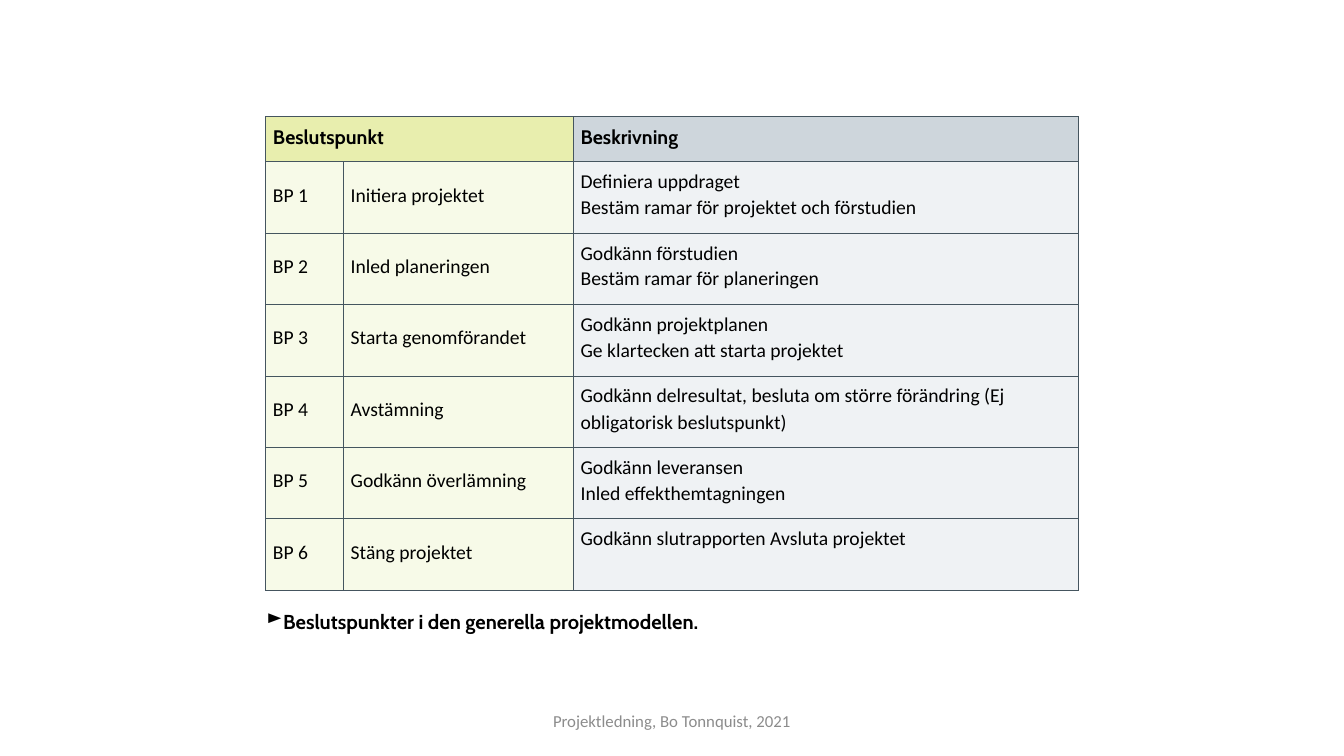
from lxml.etree import SubElement
from pptx import Presentation
from pptx.dml.color import RGBColor
from pptx.enum.text import MSO_ANCHOR, PP_ALIGN
from pptx.oxml import parse_xml
from pptx.oxml.ns import nsdecls, qn
from pptx.util import Emu, Pt

PX = 9525
THEME = {
    "head_font": "Cabin", "body_font": "Calibri",
    "text": "000000", "footer": "8C8C8C", "border": "45555F",
    "head_fills": ["E8EEAE", "E8EEAE", "CED6DC"],
    "body_fills": ["F7FAE8", "F7FAE8", "EFF2F4"],
    "table_size": 14, "caption_size": 14.4, "footer_size": 12,
}
COLS = [74, 219, 481]
HEAD_H, ROW_H = 43, 68
DECISIONS = [
    ("Initiera projektet", ["Definiera uppdraget", "Bestäm ramar för projektet och förstudien"]),
    ("Inled planeringen", ["Godkänn förstudien", "Bestäm ramar för planeringen"]),
    ("Starta genomförandet", ["Godkänn projektplanen", "Ge klartecken att starta projektet"]),
    ("Avstämning", ["Godkänn delresultat, besluta om större förändring (Ej obligatorisk beslutspunkt)"]),
    ("Godkänn överlämning", ["Godkänn leveransen", "Inled effekthemtagningen"]),
    ("Stäng projektet", ["Godkänn slutrapporten Avsluta projektet"]),
]


def px(n):
    return Emu(n * PX)


def write(tf, lines, size=THEME["table_size"], font=THEME["body_font"], color=THEME["text"],
          bold=False, align=PP_ALIGN.LEFT, spacing=None, bullet=None):
    tf.word_wrap = True
    for i, line in enumerate(lines):
        p = tf.add_paragraph() if i else tf.paragraphs[0]
        p.alignment = align
        if i:
            p.space_before = Pt(1.4)
        if spacing:
            p.line_spacing = spacing
        if bullet:
            pPr = p._p.get_or_add_pPr()
            pPr.set("marL", str(px(16)))
            pPr.set("indent", str(px(-13)))
            SubElement(pPr, qn("a:buChar"), char=bullet)
        r = p.add_run()
        r.text = line
        r.font.size = Pt(size)
        r.font.name = font
        r.font.bold = bold
        r.font.color.rgb = RGBColor.from_string(color)


prs = Presentation()
prs.slide_width, prs.slide_height = px(1280), px(720)
s = prs.slides.add_slide(prs.slide_layouts[6])

frame = s.shapes.add_table(len(DECISIONS) + 1, len(COLS), px(253), px(111),
                           px(sum(COLS)), px(HEAD_H + ROW_H * len(DECISIONS)))
tbl = frame.table
tbl.first_row = tbl.horz_banding = False
for col, w in zip(tbl.columns, COLS):
    col.width = px(w)
for i, row in enumerate(tbl.rows):
    row.height = px(ROW_H if i else HEAD_H)
    for j, cell in enumerate(row.cells):
        cell.margin_left, cell.margin_right = px(7), 0
        cell.margin_top = cell.margin_bottom = 0
        cell.fill.solid()
        fills = THEME["body_fills"] if i else THEME["head_fills"]
        cell.fill.fore_color.rgb = RGBColor.from_string(fills[j])
        tcPr = cell._tc.get_or_add_tcPr()
        for k, side in enumerate(["lnL", "lnR", "lnT", "lnB"]):
            tcPr.insert(k, parse_xml(
                f'<a:{side} {nsdecls("a")} w="6350"><a:solidFill>'
                f'<a:srgbClr val="{THEME["border"]}"/></a:solidFill></a:{side}>'))

tbl.cell(0, 0).merge(tbl.cell(0, 1))
for j, heading in [(0, "Beslutspunkt"), (2, "Beskrivning")]:
    cell = tbl.cell(0, j)
    cell.margin_top = px(9)
    write(cell.text_frame, [heading], font=THEME["head_font"], bold=True)

for i, (decision, description) in enumerate(DECISIONS, 1):
    for j, label in enumerate([f"BP {i}", decision]):
        cell = tbl.cell(i, j)
        cell.vertical_anchor = MSO_ANCHOR.MIDDLE
        cell.margin_bottom = px(4)
        write(cell.text_frame, [label])
    cell = tbl.cell(i, 2)
    single = len(description) == 1
    cell.margin_top = px(4 if single else 8)
    write(cell.text_frame, description, spacing=1.15 if single else None)

caption = s.shapes.add_textbox(px(251), px(577), px(428), px(26))
footer = s.shapes.add_textbox(px(424), px(667), px(432), px(38))
for sp in (caption, footer):
    tf = sp.text_frame
    tf.margin_left = tf.margin_right = tf.margin_top = tf.margin_bottom = 0
caption.text_frame.margin_top = px(3)
footer.text_frame.vertical_anchor = MSO_ANCHOR.MIDDLE
write(caption.text_frame, ["Beslutspunkter i den generella projektmodellen."],
      size=THEME["caption_size"], font=THEME["head_font"], bold=True, bullet="►")
write(footer.text_frame, ["Projektledning, Bo Tonnquist, 2021"],
      size=THEME["footer_size"], color=THEME["footer"], align=PP_ALIGN.CENTER)

prs.save("out.pptx")
